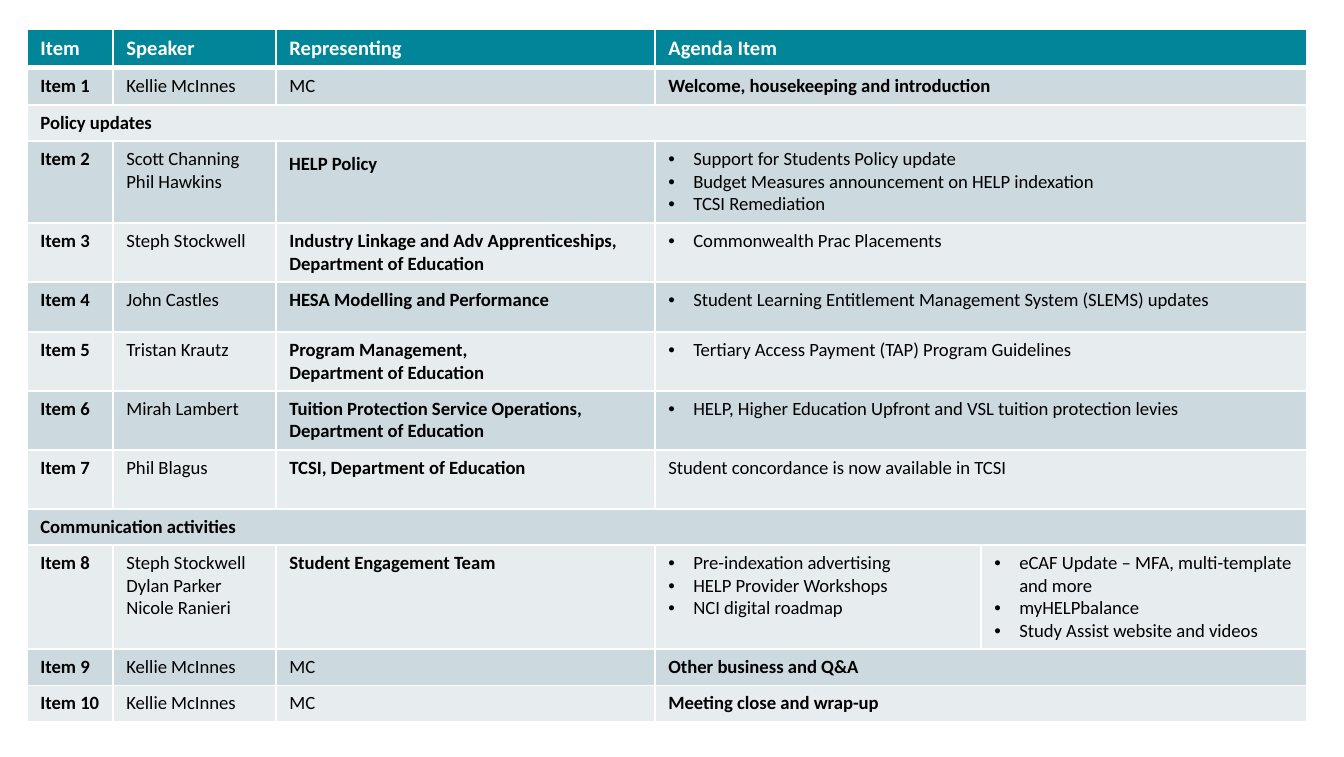
from lxml import etree
from pptx import Presentation, util as u
from pptx.dml.color import RGBColor
from pptx.oxml.ns import qn

PX = 914400 / 134.4
TEAL = RGBColor(0x00, 0x85, 0x99)
DARK = RGBColor(0xCC, 0xD9, 0xDE)
LIGHT = RGBColor(0xE7, 0xED, 0xEF)
WHITE = RGBColor(0xFF, 0xFF, 0xFF)
BLACK = RGBColor(0x00, 0x00, 0x00)


def px(n):
    return u.Emu(round(n * PX))


def edge(cell, side, width):
    """Draw a white border of the given points on one side of a cell."""
    line = etree.SubElement(cell._tc.get_or_add_tcPr(), qn(f"a:ln{side}"),
                            w=str(u.Pt(width)))
    fill = etree.SubElement(line, qn("a:solidFill"))
    etree.SubElement(fill, qn("a:srgbClr"), val=str(WHITE))


# A newline starts a paragraph, \v breaks a line, a leading • makes a bullet.
# Each row is its height followed by its cells; the last cell spans the rest.
rows = [
    (38, "Item", "Speaker", "Representing", "Agenda Item"),
    (37, "Item 1", "Kellie McInnes", "MC", "Welcome, housekeeping and introduction"),
    (36, "Policy updates"),
    (82, "Item 2", "Scott Channing\nPhil Hawkins", " HELP Policy",
     "•Support for Students Policy update\n"
     "•Budget Measures announcement on HELP indexation\n•TCSI Remediation"),
    (59, "Item 3", "Steph Stockwell",
     "Industry Linkage and Adv Apprenticeships, Department of Education",
     "•Commonwealth Prac Placements"),
    (50, "Item 4", "John Castles", "HESA Modelling and Performance",
     "•Student Learning Entitlement Management System (SLEMS) updates"),
    (58, "Item 5", "Tristan Krautz", "Program Management, \vDepartment of Education",
     "•Tertiary Access Payment (TAP) Program Guidelines"),
    (59, "Item 6", "Mirah Lambert",
     "Tuition Protection Service Operations, Department of Education",
     "•HELP, Higher Education Upfront and VSL tuition protection levies"),
    (59, "Item 7", "Phil Blagus", "TCSI, Department of Education",
     "Student concordance is now available in TCSI"),
    (36, "Communication activities"),
    (104, "Item 8", "Steph Stockwell\nDylan Parker\nNicole Ranieri",
     "Student Engagement Team",
     "•Pre-indexation advertising\n•HELP Provider Workshops\n•NCI digital roadmap",
     "•eCAF Update – MFA, multi-template and more\n•myHELPbalance\n"
     "•Study Assist website and videos"),
    (36, "Item 9", "Kellie McInnes", "MC", "Other business and Q&A"),
    (36, "Item 10", "Kellie McInnes", "MC", "Meeting close and wrap-up"),
]
widths = [86, 163, 379, 326, 326]

deck = Presentation()
deck.slide_width, deck.slide_height = u.Inches(10), u.Inches(5.63)
slide = deck.slides.add_slide(deck.slide_layouts[6])
table = slide.shapes.add_table(
    len(rows), len(widths), px(27), px(29),
    px(sum(widths)), px(sum(row[0] for row in rows))).table
table.horz_banding = False
for col, width in zip(table.columns, widths):
    col.width = px(width)

for r, (height, *texts) in enumerate(rows):
    table.rows[r].height = px(height)
    head = r == 0
    for c in range(len(widths)):
        cell = table.cell(r, c)
        for side in "LRTB":
            thick = (r, side) in ((0, "B"), (1, "T"))
            edge(cell, side, 3 if thick else 1)
        cell.fill.solid()
        cell.fill.fore_color.rgb = TEAL if head else DARK if r % 2 else LIGHT
    last = len(texts) - 1
    if last < len(widths) - 1:
        table.cell(r, last).merge(table.cell(r, len(widths) - 1))

    for c, words in enumerate(texts):
        cell = table.cell(r, c)
        frame = cell.text_frame
        frame.text = words.replace("•", "")
        bold = (head or c == 0 or (c == 2 and words != "MC")
                or (c == 3 and texts[2] == "MC"))
        look = {"name": "Calibri", "size": u.Pt(11 if head else 10), "bold": bold}
        for para in frame.paragraphs:
            if words.startswith("•"):
                props = para._p.get_or_add_pPr()
                props.set("marL", str(px(25)))
                props.set("indent", str(px(-25)))
                etree.SubElement(props, qn("a:buFont"), typeface="Arial")
                etree.SubElement(props, qn("a:buChar"), char="•")
            if words == " HELP Policy":
                para.line_spacing = 1.5
                cell.margin_left = cell.margin_right = px(9)
                cell.margin_top = cell.margin_bottom = 0
            for run in para.runs:
                for key, value in look.items():
                    setattr(run.font, key, value)
                run.font.color.rgb = WHITE if head else BLACK

deck.save("out.pptx")
